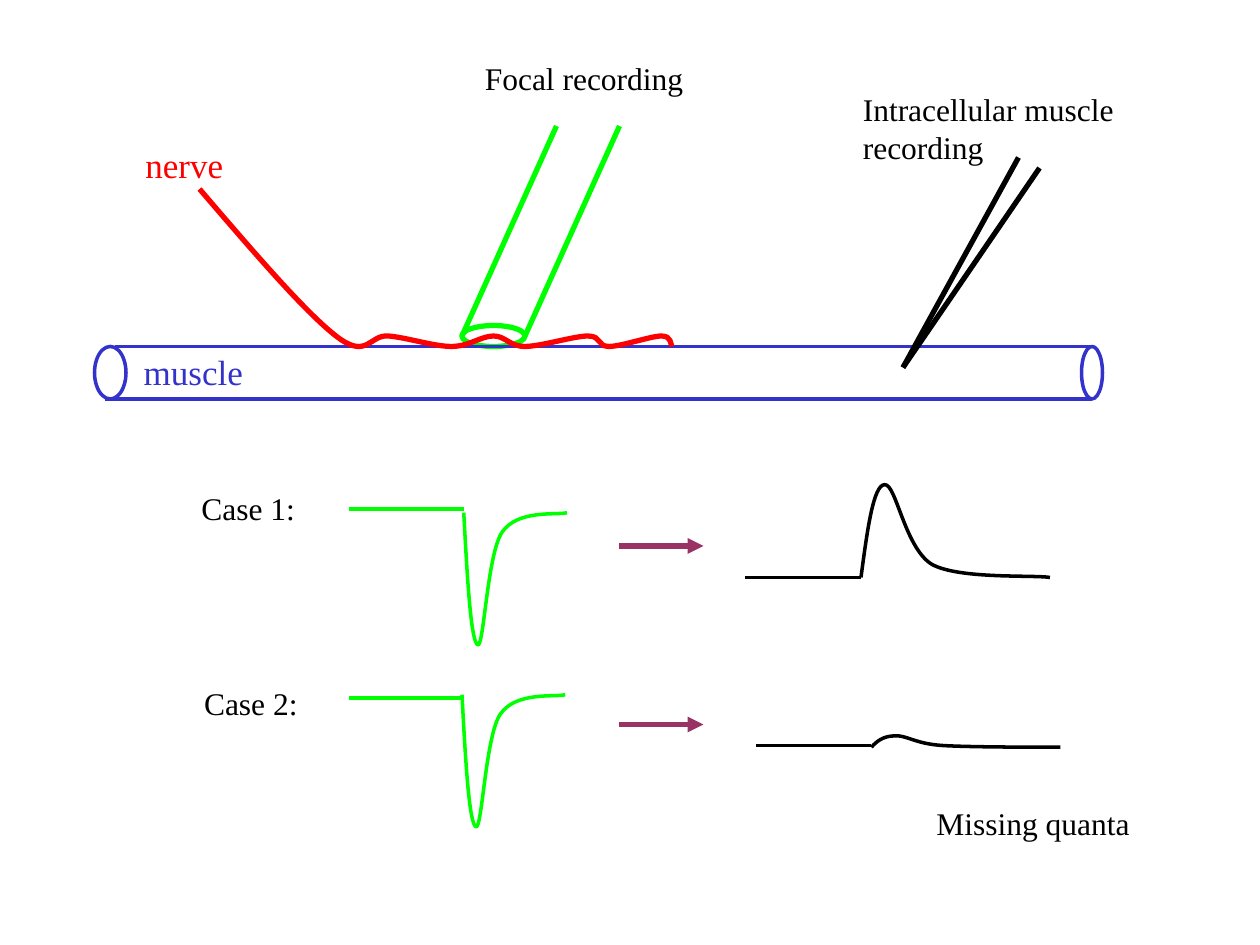
from pptx import Presentation
from pptx.dml.color import RGBColor
from pptx.enum import shapes, text
from pptx.oxml import ns, xmlchemy
from pptx.util import Pt

COLORS = {"focal": "00FF00", "muscle": "3333CC", "nerve": "FF0000",
          "ink": "000000", "arrow": "993366"}
FRAME_FORMAT = {"word_wrap": False, "auto_size": text.MSO_AUTO_SIZE.SHAPE_TO_FIT_TEXT}
FONT_FORMAT = {"name": "Times New Roman"}
NERVE = [(60, 78), (90, 113), (120, 148), (138, 162), (156, 176), (157, 161), (168, 162),
         (179, 163), (194, 168), (204, 168), (214, 168), (221, 162), (228, 162),
         (235, 162), (237, 168), (246, 168), (255, 168), (274, 162), (282, 162),
         (290, 162), (287, 168), (294, 168), (301, 168), (318, 162), (324, 162),
         (330, 162), (329, 167), (330, 168)]
FOCAL_DIP = [(0, 0), (2, 37), (4, 73.5), (8, 75.5), (11.5, 77), (13.5, 23), (22, 11),
             (31, -2), (53, 1.5), (59, 0)]
FULL_RESPONSE = [(0, 0), (3.5, -26), (7, -53), (13.5, -53), (20, -54), (25, -17),
                 (40.5, -7.5), (56, 1), (97, -1.5), (108, 0)]
SMALL_RESPONSE = [(0, 1), (3, -2.5), (7, -5.5), (13.5, -5.5), (20, -6), (25, -1),
                  (40.5, 0), (56, 1), (97, 1), (108, 1)]
CASES = [
    {"box": (108, 276), "label": "Case 1:", "label_at": (0, 0), "focal_y": 15,
     "dip": (157, 17), "arrow_y": 36, "rest": (318, 54), "response": FULL_RESPONSE},
    {"box": (108, 387), "label": "Case 2:", "label_at": (1.5, 0.5), "focal_y": 12,
     "dip": (156, 10), "arrow_y": 27, "rest": (324, 39), "response": SMALL_RESPONSE},
]


def shift(points, origin):
    """Move points from an origin's own frame to that of its parent."""
    return [(x + origin[0], y + origin[1]) for x, y in points]


def stroke(part, color, width):
    """Set the line colour and width of a part."""
    part.line.color.rgb = RGBColor.from_string(COLORS[color])
    part.line.width = Pt(width)


def add_line(slide, box, start, end, color, width):
    """Draw a straight line relative to a box and return it."""
    (x1, y1), (x2, y2) = shift([start, end], box)
    line = slide.shapes.add_connector(shapes.MSO_CONNECTOR.STRAIGHT,
                                      Pt(x1), Pt(y1), Pt(x2), Pt(y2))
    stroke(line, color, width)
    xmlchemy.OxmlElement
    line._element.spPr.append(xmlchemy.OxmlElement("a:effectLst"))
    return line


def add_arrow(slide, box, start, end):
    """Draw a line with a triangular head at its end."""
    arrow = add_line(slide, box, start, end, "arrow", 3)
    head = xmlchemy.OxmlElement("a:tailEnd")
    head.set("type", "triangle")
    arrow.line._get_or_add_ln().append(head)


def add_ellipse(slide, box, at, size, color, width):
    """Draw an unfilled ellipse relative to a box."""
    x, y = shift([at], box)[0]
    ellipse = slide.shapes.add_shape(shapes.MSO_SHAPE.OVAL, Pt(x), Pt(y),
                                     Pt(size[0]), Pt(size[1]))
    ellipse.shadow.inherit = False
    ellipse.fill.background()
    stroke(ellipse, color, width)


def add_curve(slide, box, points, color, width):
    """Draw a chain of cubic curves through every third point."""
    start, *rest = [(Pt(x), Pt(y)) for x, y in shift(points, box)]
    builder = slide.shapes.build_freeform(*start)
    builder.add_line_segments(rest, close=False)
    curve = builder.convert_to_shape()
    curve.shadow.inherit = False
    curve.fill.background()
    stroke(curve, color, width)
    outline = curve._element.xpath(".//a:path")[0]
    segments = outline.findall(ns.qn("a:lnTo"))
    for first in range(0, len(segments), 3):
        cubic = xmlchemy.OxmlElement("a:cubicBezTo")
        for segment in segments[first:first + 3]:
            cubic.append(segment[0])
            outline.remove(segment)
        outline.append(cubic)


def add_label(slide, box, at, size, lines, color="ink", points=18):
    """Write one paragraph per line relative to a box."""
    x, y = shift([at], box)[0]
    label = slide.shapes.add_textbox(Pt(x), Pt(y), Pt(size[0]), Pt(size[1]))
    frame = label.text_frame
    for key, value in FRAME_FORMAT.items():
        setattr(frame, key, value)
    frame.text = "\n".join(lines)
    for paragraph in frame.paragraphs:
        for key, value in {**FONT_FORMAT, "size": Pt(points)}.items():
            setattr(paragraph.font, key, value)
        paragraph.font.color.rgb = RGBColor.from_string(COLORS[color])


def draw_setup(slide, box):
    """Draw the muscle, its nerve and the two electrodes."""
    add_ellipse(slide, box, (210, 156), (36, 12), "focal", 3)
    add_ellipse(slide, box, (0, 168), (18, 30), "muscle", 2)
    add_line(slide, box, (12, 168), (570, 168), "muscle", 2)
    add_line(slide, box, (6, 198), (570, 198), "muscle", 2)
    add_ellipse(slide, box, (564, 168), (12, 30), "muscle", 2)
    add_curve(slide, box, NERVE, "nerve", 3)
    for tip in (246, 210):
        add_line(slide, box, (tip, 162), (tip + 54, 42), "focal", 3)
    for electrode_top in ((528, 60), (540, 66)):
        add_line(slide, box, electrode_top, (462, 180), "ink", 3)
    add_label(slide, box, (216, 0), (138, 29), ["Focal recording"])
    add_label(slide, box, (432, 18), (169, 50), ["Intracellular muscle", "recording"])
    add_label(slide, box, (21, 166.5), (84, 31), ["muscle"], "muscle", 20)
    add_label(slide, box, (22, 48.5), (68, 31), ["nerve"], "nerve", 20)


def draw_case(slide, box, case):
    """Draw one case: focal trace, arrow and muscle response."""
    add_label(slide, box, case["label_at"], (76, 29), [case["label"]])
    dip_x, focal_y = case["dip"][0], case["focal_y"]
    add_line(slide, box, (dip_x, focal_y), (91.5, focal_y), "focal", 2)
    add_curve(slide, box, shift(FOCAL_DIP, case["dip"]), "focal", 2)
    add_arrow(slide, box, (246, case["arrow_y"]), (294, case["arrow_y"]))
    rest_x, rest_y = case["rest"]
    onset = (rest_x + 66, rest_y)
    add_line(slide, box, onset, case["rest"], "ink", 2)
    add_curve(slide, box, shift(case["response"], onset), "ink", 2)


def main():
    """Build and save the slide."""
    deck = Presentation()
    deck.slide_width, deck.slide_height = Pt(720), Pt(540)
    slide = deck.slides.add_slide(deck.slide_layouts[6])
    draw_setup(slide, (54, 30))
    for case in CASES:
        draw_case(slide, case["box"], case)
    add_label(slide, (528, 456), (0, 0), (135, 29), ["Missing quanta"])
    deck.save("out.pptx")


if __name__ == "__main__":
    main()
